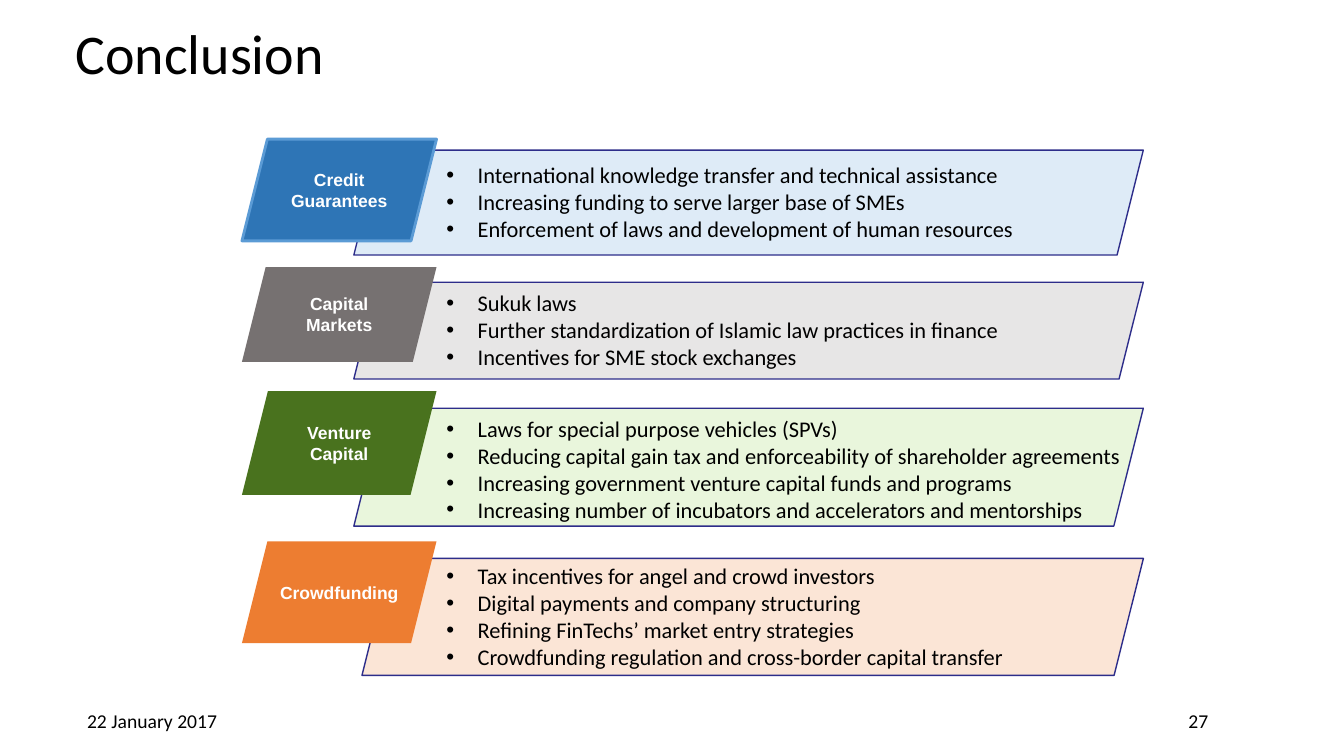
from dataclasses import dataclass

from lxml import etree
from pptx import Presentation
from pptx.dml.color import RGBColor
from pptx.enum import shapes, text
from pptx.oxml import ns
from pptx.util import Inches, Pt


@dataclass(frozen=True)
class Theme:
    heading_font: str = "Arial"
    body_font: str = "Calibri"
    ink: str = "000000"
    label_ink: str = "FFFFFF"
    band_line: str = "2D2D8A"
    title_size: float = 40
    body_size: float = 16
    footer_size: float = 14
    label_size: float = 12.5


@dataclass(frozen=True)
class Area:
    left: float
    top: float
    width: float
    height: float

    def lengths(self) -> list:
        return [Inches(n) for n in (self.left, self.top, self.width, self.height)]


@dataclass(frozen=True)
class Topic:
    label: str
    label_area: Area
    label_fill: str
    band_area: Area
    band_fill: str
    list_area: Area
    points: tuple[str, ...]
    label_line: str | None = None


THEME = Theme()
LABEL_LEFT, LABEL_WIDTH = 2.4, 1.93
LIST_LEFT = LABEL_LEFT + LABEL_WIDTH
BAND_LEFT, BAND_WIDTH = 3.51, 7.83
INDENT = 0.31

TOPICS = (
    Topic("Credit Guarantees", Area(LABEL_LEFT, 1.38, LABEL_WIDTH, 1.01), "2E75B6",
          Area(BAND_LEFT, 1.49, BAND_WIDTH, 1.04), "DEEBF7",
          Area(LIST_LEFT, 1.55, 6.59, 0.91),
          ("International knowledge transfer and technical assistance",
           "Increasing funding to serve larger base of SMEs",
           "Enforcement of laws and development of human resources"),
          label_line="5B9BD5"),
    Topic("Capital Markets", Area(LABEL_LEFT, 2.65, LABEL_WIDTH, 0.94), "767171",
          Area(BAND_LEFT, 2.8, BAND_WIDTH, 0.96), "E7E6E6",
          Area(LIST_LEFT, 2.82, 6.76, 0.91),
          ("Sukuk laws",
           "Further standardization of Islamic law practices in finance",
           "Incentives for SME stock exchanges")),
    Topic("Venture Capital", Area(LABEL_LEFT, 3.88, LABEL_WIDTH, 1.03), "49721E",
          Area(BAND_LEFT, 4.05, BAND_WIDTH, 1.17), "E9F6DC",
          Area(LIST_LEFT, 4.07, 7.29, 1.18),
          ("Laws for special purpose vehicles (SPVs)",
           "Reducing capital gain tax and enforceability of shareholder agreements",
           "Increasing government venture capital funds and programs",
           "Increasing number of incubators and accelerators and mentorships")),
    Topic("Crowdfunding", Area(LABEL_LEFT, 5.37, LABEL_WIDTH, 1.01), "ED7D31",
          Area(3.59, 5.54, 7.75, 1.16), "FBE5D6",
          Area(LIST_LEFT, 5.53, 6.76, 1.45),
          ("Tax incentives for angel and crowd investors",
           "Digital payments and company structuring",
           "Refining FinTechs’ market entry strategies",
           "Crowdfunding regulation and cross-border capital transfer")),
)

FOOTERS = (
    ("22 January 2017", Area(0.01, 6.95, 3, 0.4)),
    ("27", Area(10.45, 6.95, 2.87, 0.4)),
)


def style(para, font: str, size: float, color: str, bold: bool = False) -> None:
    para.font.name = font
    para.font.size = Pt(size)
    para.font.bold = bold
    para.font.color.rgb = RGBColor.from_string(color)


def add_slanted(page, area: Area, fill: str, line: str | None, weight: float):
    box = page.shapes.add_shape(shapes.MSO_SHAPE.PARALLELOGRAM, *area.lengths())
    box.shadow.inherit = False
    box.fill.solid()
    box.fill.fore_color.rgb = RGBColor.from_string(fill)
    if line is None:
        box.line.fill.background()
    else:
        box.line.color.rgb = RGBColor.from_string(line)
        box.line.width = Pt(weight)
    return box


def add_label(page, topic: Topic) -> None:
    box = add_slanted(page, topic.label_area, topic.label_fill, topic.label_line, 2)
    frame = box.text_frame
    frame.word_wrap = True
    frame.vertical_anchor = text.MSO_ANCHOR.MIDDLE
    frame.margin_left = frame.margin_right = Inches(0.08)
    para = frame.paragraphs[0]
    para.text = topic.label
    para.alignment = text.PP_ALIGN.CENTER
    style(para, THEME.heading_font, THEME.label_size, THEME.label_ink, bold=True)


def add_list(page, area: Area, points: tuple[str, ...]) -> None:
    frame = page.shapes.add_textbox(*area.lengths()).text_frame
    frame.word_wrap = True
    frame.auto_size = text.MSO_AUTO_SIZE.SHAPE_TO_FIT_TEXT
    for index, point in enumerate(points):
        para = frame.add_paragraph() if index else frame.paragraphs[0]
        para.text = point
        properties = para._p.get_or_add_pPr()
        properties.set("marL", str(Inches(INDENT)))
        properties.set("indent", str(-Inches(INDENT)))
        etree.SubElement(properties, ns.qn("a:buFont"), typeface=THEME.heading_font)
        etree.SubElement(properties, ns.qn("a:buChar"), char="•")
        style(para, THEME.body_font, THEME.body_size, THEME.ink)


def add_footer(page, words: str, area: Area) -> None:
    frame = page.shapes.add_textbox(*area.lengths()).text_frame
    frame.word_wrap = True
    frame.vertical_anchor = text.MSO_ANCHOR.MIDDLE
    para = frame.paragraphs[0]
    para.text = words
    para.alignment = text.PP_ALIGN.CENTER
    style(para, THEME.body_font, THEME.footer_size, THEME.ink)


def set_title(page, words: str, area: Area) -> None:
    title = page.shapes.title
    title.left, title.top, title.width, title.height = area.lengths()
    title.text_frame.vertical_anchor = text.MSO_ANCHOR.MIDDLE
    para = title.text_frame.paragraphs[0]
    para.text = words
    para.alignment = text.PP_ALIGN.LEFT
    para.line_spacing = 0.9
    style(para, THEME.body_font, THEME.title_size, THEME.ink)


def main() -> None:
    deck = Presentation()
    deck.slide_width, deck.slide_height = Inches(13.33), Inches(7.5)
    page = deck.slides.add_slide(deck.slide_layouts.get_by_name("Title Only"))

    # Title
    set_title(page, "Conclusion", Area(0.65, 0.02, 11.63, 1.08))

    # Topic rows: band, label, bullet list
    for topic in TOPICS:
        add_slanted(page, topic.band_area, topic.band_fill, THEME.band_line, 1)
        add_label(page, topic)
        add_list(page, topic.list_area, topic.points)

    # Date and page number
    for words, area in FOOTERS:
        add_footer(page, words, area)

    deck.save("out.pptx")


if __name__ == "__main__":
    main()
